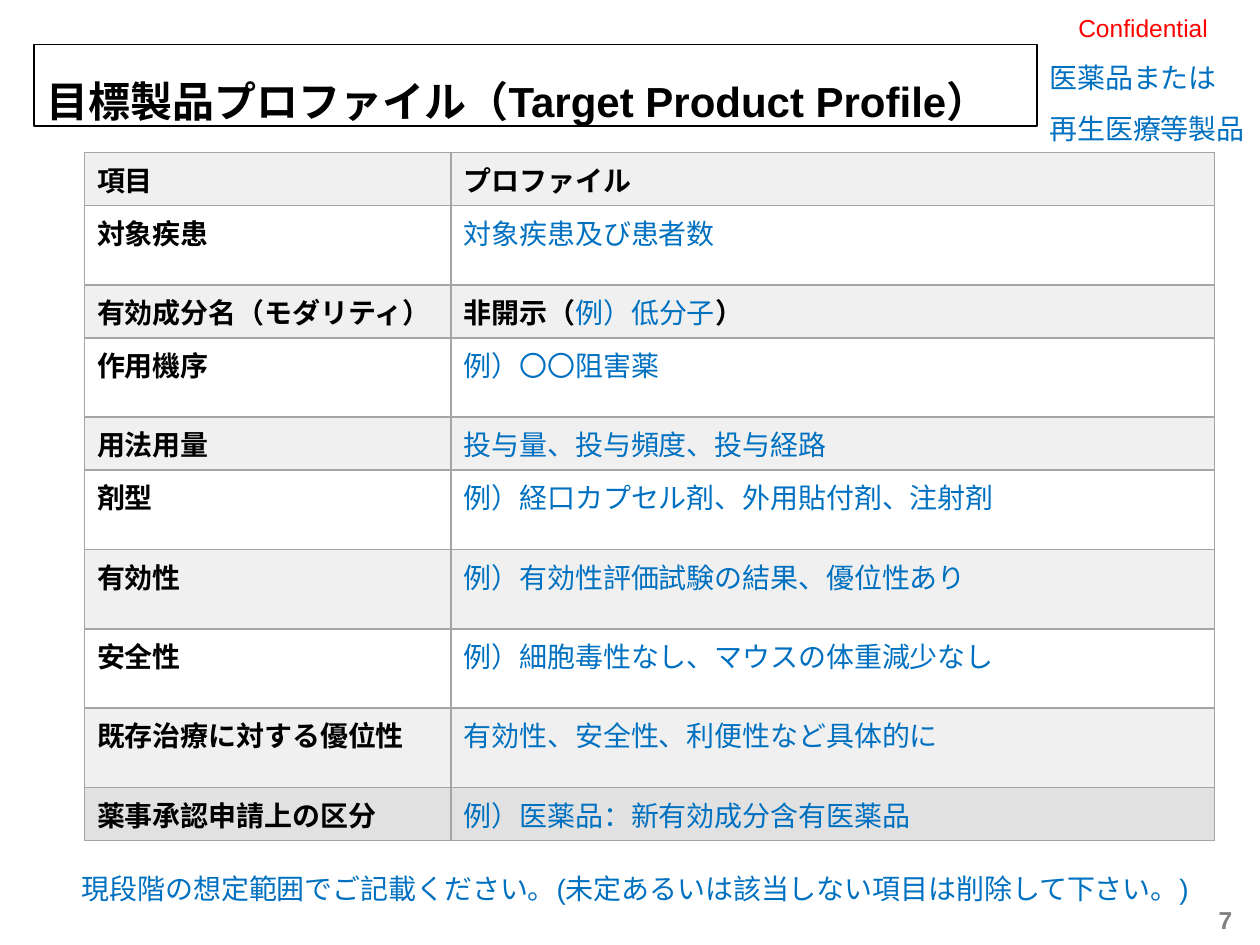
from lxml import etree
from pptx import Presentation, util as u
from pptx.dml.color import RGBColor
from pptx.enum import text
from pptx.oxml.ns import qn

C = {"black": "000000", "blue": "0070C0", "red": "FF0000", "gray": "808080",
     "border": "A5A5A5", "band": "F0F0F0", "white": "FFFFFF", "last": "E1E1E1"}

prs = Presentation()
prs.slide_width, prs.slide_height = u.Inches(10), u.Inches(7.5)
W, H = prs.slide_width, prs.slide_height
s = prs.slides.add_slide(prs.slide_layouts[5])


def add_run(p, words, color, **fmt):
    r = p.add_run()
    r.text = words
    for name, value in fmt.items():
        setattr(r.font, name, value)
    r.font.color.rgb = RGBColor.from_string(C[color])


def fill_box(sp, box, lines, color, spacing=None, align=text.PP_ALIGN.LEFT,
             anchor=text.MSO_ANCHOR.TOP, **fmt):
    for name, share, full in zip(("left", "top", "width", "height"), box, (W, H, W, H)):
        setattr(sp, name, int(full * share / 100))
    tf = sp.text_frame
    for name, value in {"word_wrap": True, "vertical_anchor": anchor,
                        "auto_size": text.MSO_AUTO_SIZE.NONE}.items():
        setattr(tf, name, value)
    for i, line in enumerate(lines):
        p = tf.add_paragraph() if i else tf.paragraphs[0]
        p.alignment = align
        if spacing:
            p.line_spacing = spacing
        add_run(p, line, color, name="Arial", **fmt)


title = s.shapes.title
fill_box(title, (2.7, 4.67, 79.6, 8.67), ["目標製品プロファイル（Target Product Profile）"],
         "black", spacing=1.5, size=u.Pt(24), bold=True)
title.line.color.rgb = RGBColor.from_string(C["black"])
title.line.width = u.Pt(0.75)

notes = [
    ((94.5, 94.67, 5.5, 5.33), ["7"], "gray",
     {"size": u.Pt(14), "bold": True, "align": text.PP_ALIGN.CENTER,
      "anchor": text.MSO_ANCHOR.MIDDLE}),
    ((84.6, 0.67, 12.6, 4.53), ["Confidential"], "red", {"size": u.Pt(14)}),
    ((82.3, 4, 18.1, 11.6), ["医薬品または", "再生医療等製品"], "blue",
     {"size": u.Pt(16), "spacing": 1.5}),
    ((5.5, 91.6, 92.1, 4.93),
     ["現段階の想定範囲でご記載ください。(未定あるいは該当しない項目は削除して下さい。)"],
     "blue", {"size": u.Pt(16)}),
]
for box, lines, color, fmt in notes:
    fill_box(s.shapes.add_textbox(0, 0, W, H), box, lines, color, **fmt)

profile = [
    ("項目", [("プロファイル", "black")]),
    ("対象疾患", [("対象疾患及び患者数", "blue")]),
    ("有効成分名（モダリティ）", [("非開示（", "black"), ("例）低分子", "blue"), ("）", "black")]),
    ("作用機序", [("例）〇〇阻害薬", "blue")]),
    ("用法用量", [("投与量、投与頻度、投与経路", "blue")]),
    ("剤型", [("例）経口カプセル剤、外用貼付剤、注射剤", "blue")]),
    ("有効性", [("例）有効性評価試験の結果、優位性あり", "blue")]),
    ("安全性", [("例）細胞毒性なし、マウスの体重減少なし", "blue")]),
    ("既存治療に対する優位性", [("有効性、安全性、利便性など具体的に", "blue")]),
    ("薬事承認申請上の区分", [("例）医薬品：新有効成分含有医薬品", "blue")]),
]
short_rows = {0, 2, 4, 9}
last = len(profile) - 1
tbl = s.shapes.add_table(len(profile), 2, int(W * 0.067), int(H * 0.1613),
                         int(W * 0.897), int(H * 0.7227)).table
for col, share in zip(tbl.columns, (0.291, 0.606)):
    col.width = int(W * share)

for i, (item, runs) in enumerate(profile):
    tbl.rows[i].height = u.Inches(0.41 if i in short_rows else 0.63)
    shade = "last" if i == last else ("white" if i % 2 else "band")
    for j, cell_runs in enumerate(([(item, "black")], runs)):
        cell = tbl.cell(i, j)
        cell.fill.solid()
        cell.fill.fore_color.rgb = RGBColor.from_string(C[shade])
        p = cell.text_frame.paragraphs[0]
        for words, color in cell_runs:
            add_run(p, words, color, name="Calibri", size=u.Pt(16), bold=color == "black")
        tcPr = cell._tc.get_or_add_tcPr()
        for k, side in enumerate(("a:lnL", "a:lnR", "a:lnT", "a:lnB")):
            ln = etree.Element(qn(side), w=str(u.Pt(1)))
            solid = etree.SubElement(ln, qn("a:solidFill"))
            etree.SubElement(solid, qn("a:srgbClr"), val=C["border"])
            tcPr.insert(k, ln)

prs.save("out.pptx")
